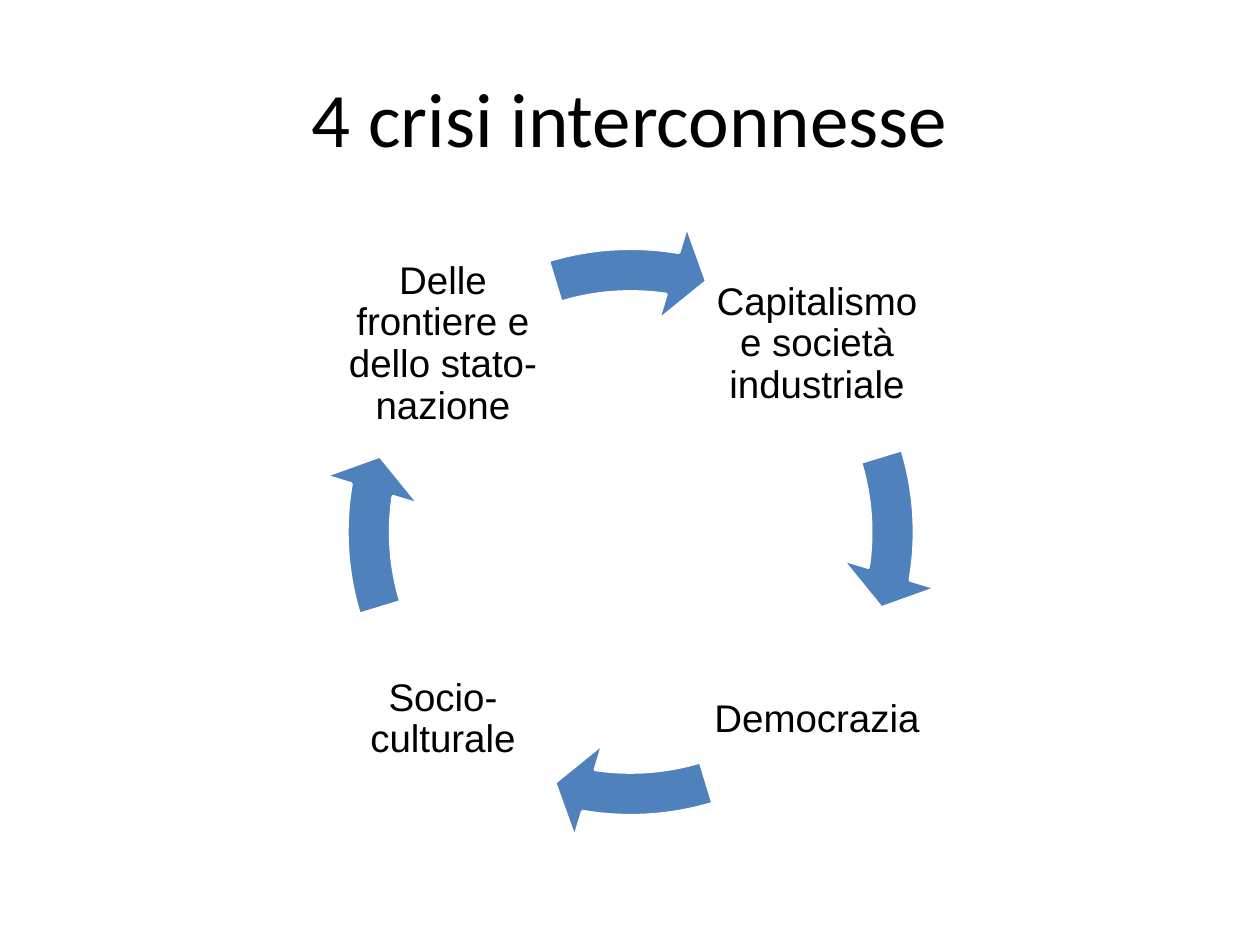
from dataclasses import dataclass

import pptx
import pptx.dml.color
import pptx.enum.shapes
import pptx.enum.text
import pptx.util
from pptx.util import Cm

COLORS = {"text": "000000", "arrow": "4F81BD", "outline": "FFFFFF"}

# Cycle geometry, in centimetres
LEFT, RIGHT = 6.71, 14.25
TOP, BOTTOM = 4.72, 12.29
LABEL_SIZE = 4.44
RING_LEFT, RING_TOP, RING_SIZE = 6.43, 4.44, 12.57

# Arrow angles: one adjustment unit is 100000/60000 of a degree
FULL_TURN = 360 * 0.6
QUARTER_TURN = FULL_TURN / 4


@dataclass
class TextStyle:
    font: str
    size: float
    margin: float
    line_spacing: float = 1.0


@dataclass
class Crisis:
    text: str
    left: float
    top: float


TITLE_STYLE = TextStyle("Calibri", 44, 0.25)
LABEL_STYLE = TextStyle("Arial", 22, 0.08, 0.9)

# Clockwise from the top right
CRISES = [
    Crisis("Capitalismo e società industriale", RIGHT, TOP),
    Crisis("Democrazia", RIGHT, BOTTOM),
    Crisis("Socio-culturale", LEFT, BOTTOM),
    Crisis("Delle frontiere e dello stato-nazione", LEFT, TOP),
]


def rgb(name: str) -> pptx.dml.color.RGBColor:
    return pptx.dml.color.RGBColor.from_string(COLORS[name])


def add_text(slide, text: str, left: float, top: float, width: float,
             height: float, style: TextStyle) -> None:
    box = slide.shapes.add_textbox(Cm(left), Cm(top), Cm(width), Cm(height))
    frame = box.text_frame
    frame.word_wrap = True
    frame.vertical_anchor = pptx.enum.text.MSO_ANCHOR.MIDDLE
    frame.margin_left = frame.margin_right = Cm(style.margin)
    frame.margin_top = frame.margin_bottom = Cm(style.margin)
    frame.text = text
    paragraph = frame.paragraphs[0]
    paragraph.alignment = pptx.enum.text.PP_ALIGN.CENTER
    paragraph.line_spacing = style.line_spacing
    font = paragraph.runs[0].font
    font.name = style.font
    font.size = pptx.util.Pt(style.size)
    font.color.rgb = rgb("text")


def add_cycle_arrow(slide, step: int) -> None:
    arrow = slide.shapes.add_shape(
        pptx.enum.shapes.MSO_SHAPE.CIRCULAR_ARROW,
        Cm(RING_LEFT), Cm(RING_TOP), Cm(RING_SIZE), Cm(RING_SIZE))
    turn = step * QUARTER_TURN
    # Thickness, head angle, end angle, start angle, head width
    values = (0.07, 4.65, 5.49 + turn, (205.86 + turn) % FULL_TURN, 0.08)
    for index, value in enumerate(values):
        arrow.adjustments[index] = value
    arrow.shadow.inherit = False
    arrow.fill.solid()
    arrow.fill.fore_color.rgb = rgb("arrow")
    arrow.line.color.rgb = rgb("outline")
    arrow.line.width = pptx.util.Pt(2)


def main() -> None:
    presentation = pptx.Presentation()
    presentation.slide_width = Cm(25.4)
    presentation.slide_height = Cm(19.05)
    slide = presentation.slides.add_slide(presentation.slide_layouts[6])

    # Title
    add_text(slide, "4 crisi interconnesse", 1.27, 0.76, 22.86, 3.18, TITLE_STYLE)

    # Cycle of labels, each followed by its arrow
    for step, crisis in enumerate(CRISES):
        add_text(slide, crisis.text, crisis.left, crisis.top,
                 LABEL_SIZE, LABEL_SIZE, LABEL_STYLE)
        add_cycle_arrow(slide, step)

    presentation.save("out.pptx")


if __name__ == "__main__":
    main()
